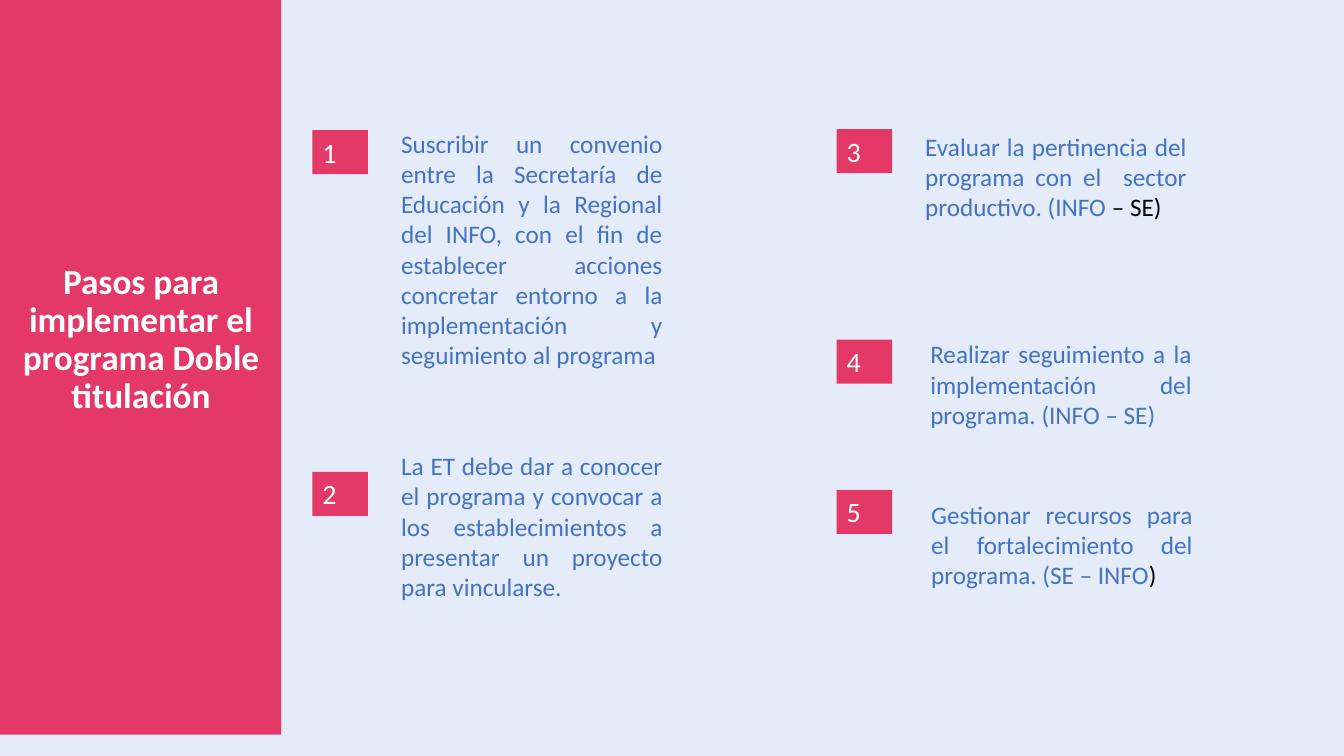
from typing import NamedTuple

from pptx import Presentation
from pptx import util as u
from pptx.dml import color
from pptx.enum import shapes, text

PINK, BLUE, WHITE, BLACK = "E43866", "4472C4", "FFFFFF", "000000"
PALE = "E3ECF8"
FONT = "Calibri"
LEFT, RIGHT = 223.2, 597.6  # badge columns


class Box(NamedTuple):
    x: float
    y: float
    w: float
    h: float

    def pts(self) -> list[u.Pt]:
        return [u.Pt(side) for side in self]


class Step(NamedTuple):
    col: float
    top: float
    box: Box
    words: str
    tail: str = ""  # closing words in black


STEPS = [
    Step(LEFT, 92.9, Box(279.4, 87.8, 200.9, 181.4),
         "Suscribir un convenio entre la Secretaría de Educación y la Regional del "
         "INFO, con el fin de establecer acciones concretar entorno a la "
         "implementación y seguimiento al programa"),
    Step(LEFT, 337, Box(279.4, 318.2, 200.9, 116.6),
         "La ET debe dar a conocer el programa y convocar a los establecimientos "
         "a presentar un proyecto para vincularse."),
    Step(RIGHT, 92.2, Box(653.8, 90, 200.9, 72.7),
         "Evaluar la pertinencia del programa con el  sector productivo. (INFO ",
         "– SE)"),
    Step(RIGHT, 242.6, Box(657.4, 238.3, 200.9, 72.7),
         "Realizar seguimiento a la implementación del programa. (INFO – SE)"),
    Step(RIGHT, 349.9, Box(658.1, 352.8, 200.9, 72.7),
         "Gestionar recursos para el fortalecimiento del programa. (SE – INFO",
         ")"),
]


def rgb(code: str) -> color.RGBColor:
    return color.RGBColor.from_string(code)


def style(run, size: float, code: str, bold: bool = False) -> None:
    font = run.font
    font.name, font.size, font.bold = FONT, u.Pt(size), bold
    font.color.rgb = rgb(code)


def write(shape, words: str, size: float, code: str, align, bold: bool = False):
    """Fill a shape with one wrapped paragraph and return it."""
    frame = shape.text_frame
    frame.text = words
    frame.word_wrap = True
    para = frame.paragraphs[0]
    para.alignment = align
    style(para.runs[0], size, code, bold)
    return para


def block(slide, box: Box):
    """Draw a plain pink rectangle."""
    rect = slide.shapes.add_shape(shapes.MSO_SHAPE.RECTANGLE, *box.pts())
    rect.shadow.inherit = False
    rect.fill.solid()
    rect.fill.fore_color.rgb = rgb(PINK)
    rect.line.fill.background()
    return rect


def title(slide) -> None:
    label = slide.shapes.add_textbox(*Box(-10.8, 190.8, 223.2, 104.4).pts())
    para = write(label, "Pasos para implementar el programa Doble titulación",
                 25.2, WHITE, text.PP_ALIGN.CENTER, bold=True)
    para.line_spacing = 0.9
    label.text_frame.vertical_anchor = text.MSO_ANCHOR.MIDDLE


def draw(slide, num: int, step: Step) -> None:
    badge = block(slide, Box(step.col, step.top, 39.6, 31.5))
    write(badge, str(num), 20, WHITE, text.PP_ALIGN.LEFT)
    badge.text_frame.vertical_anchor = text.MSO_ANCHOR.TOP
    label = slide.shapes.add_textbox(*step.box.pts())
    para = write(label, step.words, 18, BLUE, text.PP_ALIGN.JUSTIFY)
    if step.tail:
        run = para.add_run()
        run.text = step.tail
        style(run, 18, BLACK)


def main() -> None:
    deck = Presentation()
    deck.slide_width, deck.slide_height = u.Pt(960), u.Pt(540)
    slide = deck.slides.add_slide(deck.slide_layouts[6])
    back = slide.background.fill
    back.solid()
    back.fore_color.rgb = rgb(PALE)
    block(slide, Box(0, -2.2, 200.9, 527))
    title(slide)
    for num, step in enumerate(STEPS, 1):
        draw(slide, num, step)
    deck.save("out.pptx")


if __name__ == "__main__":
    main()
